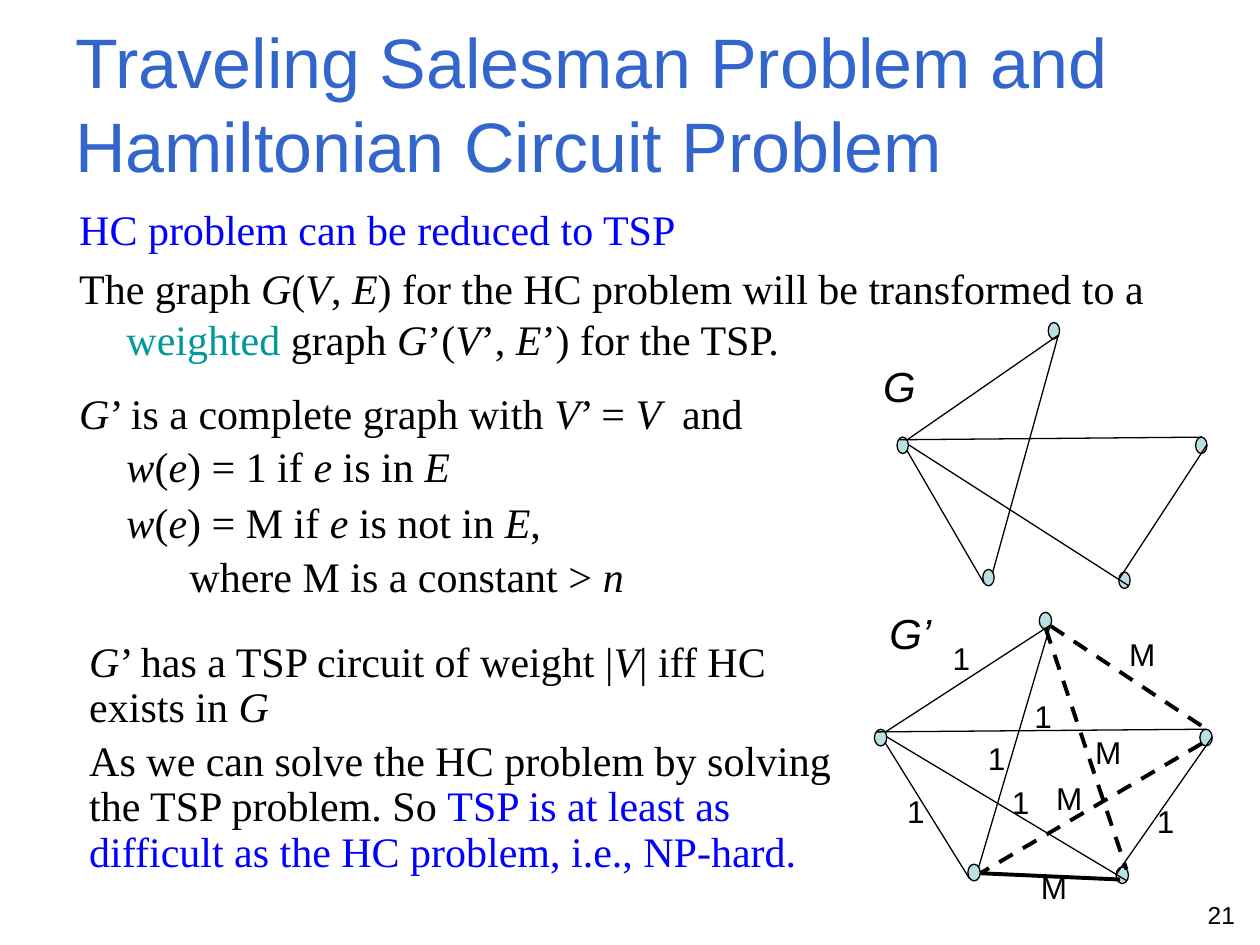
from lxml.etree import SubElement
from pptx import Presentation
from pptx.dml.color import RGBColor
from pptx.enum.dml import MSO_LINE
from pptx.enum.shapes import MSO_CONNECTOR, MSO_SHAPE
from pptx.enum.text import MSO_ANCHOR, PP_ALIGN
from pptx.oxml.ns import qn
from pptx.util import Pt

COLORS = {"title": "3366CC", "blue": "0000FF", "teal": "009999",
          "black": "000000", "node": "BBE0E3"}
SERIF = {"name": "Times New Roman", "size": Pt(24)}

deck = Presentation()
deck.slide_width, deck.slide_height = Pt(720), Pt(540)
page = deck.slides.add_slide(deck.slide_layouts[6])


def add_text(place, paragraphs, font, layout=None, hanging=0, wrap=True,
             anchor=MSO_ANCHOR.TOP):
    """Each paragraph is a list of (text, colour); asterisks enclose italics."""
    box = page.shapes.add_textbox(*map(Pt, place))
    frame = box.text_frame
    frame.word_wrap, frame.vertical_anchor = wrap, anchor
    for index, spans in enumerate(paragraphs):
        para = frame.paragraphs[0] if index == 0 else frame.add_paragraph()
        for name, value in (layout or {}).items():
            setattr(para, name, value)
        if hanging:
            properties = para._p.get_or_add_pPr()
            properties.set("marL", str(Pt(hanging)))
            properties.set("indent", str(-Pt(hanging)))
        for text, color in spans:
            for part, piece in enumerate(text.split("*")):
                if not piece:
                    continue
                span = para.add_run()
                span.text = piece
                for name, value in font.items():
                    setattr(span.font, name, value)
                span.font.italic = part % 2 == 1
                span.font.color.rgb = RGBColor.from_string(COLORS[color])


def add_edge(start, end, width=0.75, dash=None):
    edge = page.shapes.add_connector(MSO_CONNECTOR.STRAIGHT,
                                     *map(Pt, (*start, *end)))
    edge.line.color.rgb = RGBColor.from_string(COLORS["black"])
    edge.line.width = Pt(width)
    if dash:
        edge.line.dash_style = dash
    SubElement(edge._element.spPr, qn("a:effectLst"))


# Title and page number
add_text((36, 13.7, 648, 90),
         [[("Traveling Salesman Problem and Hamiltonian Circuit Problem", "title")]],
         {"name": "Arial", "size": Pt(40)}, anchor=MSO_ANCHOR.MIDDLE)
add_text((545, 510.5, 167.8, 22.3), [[("21", "black")]],
         {"name": "Arial", "size": Pt(14)}, {"alignment": PP_ALIGN.RIGHT})

# Explanation
spaced = {"space_before": Pt(4.8)}
tight = {"space_before": Pt(4.8), "line_spacing": 0.9}
add_text((38.2, 113, 648, 99.4), [
    [("HC problem can be reduced to TSP", "blue")],
    [("The graph *G*(*V*, *E*) for the HC problem will be transformed to a ", "black"),
     ("weighted ", "teal"),
     ("graph *G*’(*V*’, *E*’) for the TSP.", "black")],
], SERIF, spaced, hanging=27)
add_text((38.2, 221, 436.3, 67.7), [
    [("*G*’ is a complete graph with *V*’ = *V*  and", "black")],
    [("\t*w*(*e*) = 1 if *e* is in *E*", "black")],
], SERIF, tight, hanging=27)
add_text((38.2, 283.7, 436.3, 73.4), [
    [("\t*w*(*e*) = M if *e* is not in *E*,", "black")],
    [("\t\twhere M is a constant > *n*", "black")],
], SERIF, tight, hanging=27)
add_text((43.9, 362.9, 438.5, 142.6), [
    [("*G*’ has a TSP circuit of weight |*V*| iff HC exists in *G*", "black")],
    [("As we can solve the HC problem by solving the TSP problem. So ", "black"),
     ("TSP is at least as difficult as the HC problem, i.e., NP-hard.", "blue")],
], SERIF, tight)

# Both graphs share one geometry; G’ is a slightly stretched G
nodes = [(86.4, 0), (0, 65.5), (170.6, 65.5), (49, 141.1), (126.7, 142.6)]
edges = [((5.8, 67), (92.2, 7.2)), ((6.5, 69.8), (132.5, 150.5)),
         ((1.4, 67), (174.2, 65.5)), ((49.7, 149), (5.8, 73.4)),
         ((126.7, 146.9), (177.1, 69.8)), ((54.7, 142.6), (92.2, 7.2))]
graphs = [(512.6, 184.3, 1, 1), (499.7, 349.9, 1.09, 1.02)]
for left, top, stretch_x, stretch_y in graphs:
    for x, y in nodes:
        node = page.shapes.add_shape(
            MSO_SHAPE.OVAL, Pt(left + x * stretch_x), Pt(top + y * stretch_y),
            Pt(6.5 * stretch_x), Pt(9.4 * stretch_y))
        node.shadow.inherit = False
        node.fill.solid()
        node.fill.fore_color.rgb = RGBColor.from_string(COLORS["node"])
        node.line.color.rgb = RGBColor.from_string(COLORS["black"])
        node.line.width = Pt(0.75)
    for ends in edges:
        add_edge(*((left + x * stretch_x, top + y * stretch_y) for x, y in ends))

# Edges that complete G’
for start, end, dash in [
    ((600.5, 357.8), (691.9, 418.3), MSO_LINE.DASH),
    ((597.6, 359.3), (643.7, 496.8), MSO_LINE.DASH),
    ((686.9, 424.8), (560.2, 499), MSO_LINE.DASH),
    ((560.2, 499), (640.1, 502.6), None),
]:
    add_edge(start, end, 2.25, dash)

# Graph names and edge weights
labels = [
    ("*G*", 24, 33.1, 36, [(497.5, 202.3)]),
    ("*G’*", 24, 38.2, 36, [(501.1, 343.4)]),
    ("1", 18, 24.5, 28.8, [(537.1, 361.4), (511.2, 449.3), (557.3, 419),
                           (653.8, 455), (583.9, 394.6), (571, 444.2)]),
    ("M", 18, 29.5, 28.8, [(618.5, 415.4), (596.2, 441.4),
                           (637.9, 359.3), (587.5, 492.5)]),
]
for text, size, width, height, places in labels:
    for place in places:
        add_text((*place, width, height), [[(text, "black")]],
                 {"name": "Arial", "size": Pt(size)},
                 {"alignment": PP_ALIGN.CENTER}, wrap=False)

deck.save("out.pptx")
